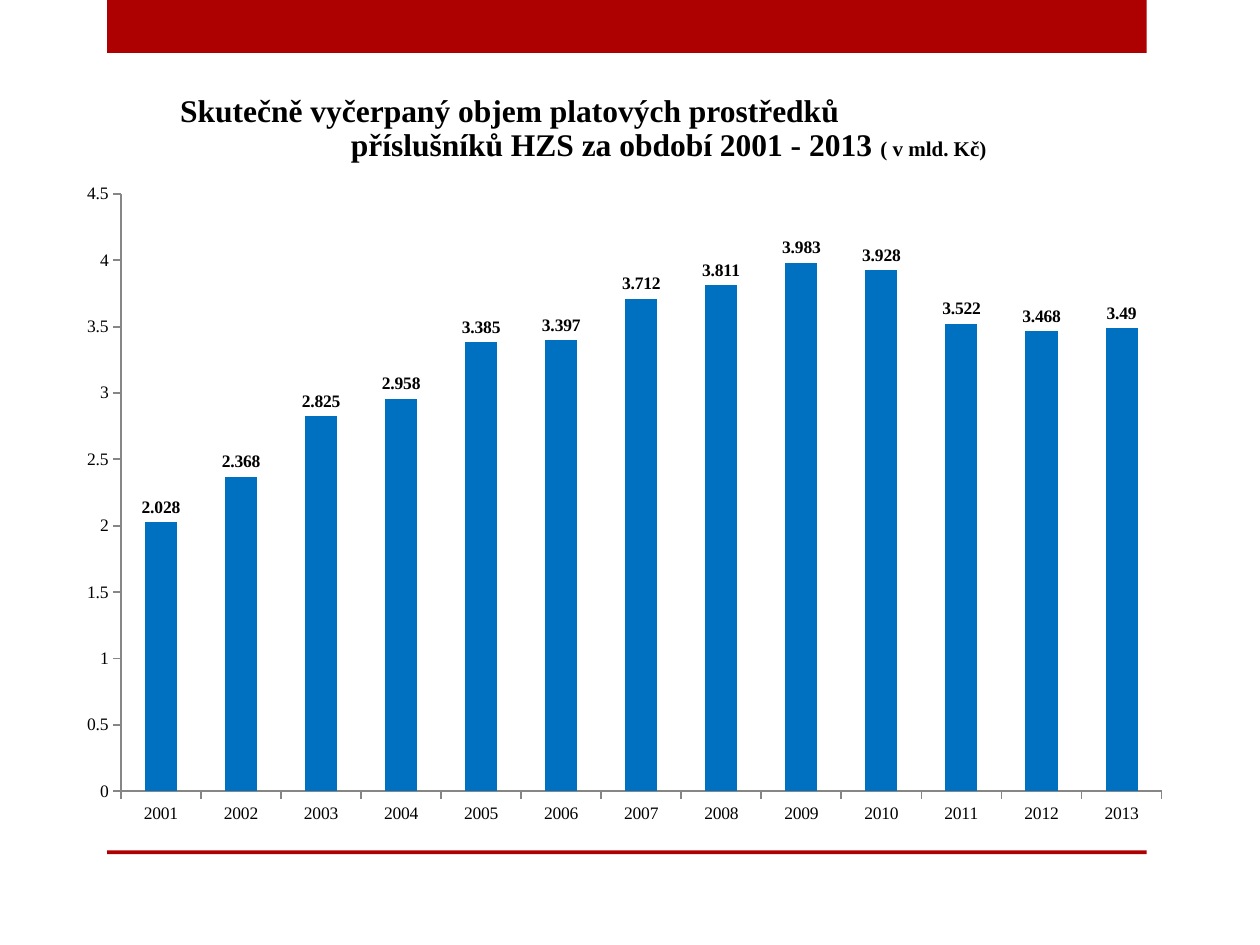
from dataclasses import dataclass

from pptx import Presentation
from pptx.chart.data import CategoryChartData
from pptx.dml.color import RGBColor as RGB
from pptx.enum.chart import XL_CHART_TYPE as Kind
from pptx.enum.chart import XL_LABEL_POSITION as Place
from pptx.enum.chart import XL_TICK_MARK as Tick
from pptx.enum.shapes import MSO_SHAPE as Shape
from pptx.enum.text import MSO_ANCHOR as Anchor
from pptx.enum.text import MSO_AUTO_SIZE as Fit
from pptx.enum.text import PP_ALIGN as Align
from pptx.oxml import parse_xml
from pptx.oxml.ns import nsdecls
from pptx.util import Inches, Pt


@dataclass(frozen=True)
class Theme:
    face: str = "Times New Roman"
    red: RGB = RGB(0xAD, 0x01, 0x01)
    blue: RGB = RGB(0x00, 0x70, 0xC0)
    ink: RGB = RGB(0, 0, 0)
    axis: RGB = RGB(0x86, 0x86, 0x86)
    head: Pt = Pt(18)
    unit: Pt = Pt(12)
    pitch: Pt = Pt(19.5)
    label: Pt = Pt(10)
    line: Pt = Pt(1)


THEME = Theme()
YEARS = range(2001, 2014)
SPEND = (2.028, 2.368, 2.825, 2.958, 3.385, 3.397, 3.712,
         3.811, 3.983, 3.928, 3.522, 3.468, 3.49)


def style(font, size, bold=False):
    font.name = THEME.face
    font.size = size
    font.bold = bold
    font.color.rgb = THEME.ink


def add_bands(slide, left, width):
    for top, height in ((0, 0.42), (6.75, 0.03)):
        band = slide.shapes.add_shape(
            Shape.RECTANGLE, left, Inches(top), width, Inches(height))
        band.shadow.inherit = False
        band.fill.solid()
        band.fill.fore_color.rgb = THEME.red
        band.line.fill.background()


def set_title(slide, left, top, width, height):
    title = slide.shapes.title
    title.left, title.top, title.width, title.height = left, top, width, height
    frame = title.text_frame
    frame.margin_left = frame.margin_right = 0
    frame.margin_top = frame.margin_bottom = 0
    frame.vertical_anchor = Anchor.TOP
    frame.auto_size = Fit.NONE
    frame.word_wrap = True

    first = frame.paragraphs[0]
    first.text = "Skutečně vyčerpaný objem platových prostředků"
    first.alignment = Align.LEFT
    second = frame.add_paragraph()
    second.add_run().text = "příslušníků HZS za období 2001 - 2013 "
    unit = second.add_run()
    unit.text = "( v mld. Kč)"
    second.alignment = Align.RIGHT
    for para in frame.paragraphs:
        para.line_spacing = THEME.pitch
        style(para.font, THEME.head, True)
    unit.font.size = THEME.unit


def fix_plot(chart, x, y, w, h):
    """Pin the inner plot area, given as fractions of the chart."""
    area = chart._chartSpace.chart.plotArea
    for old in area.findall("{*}layout"):
        area.remove(old)
    parts = "".join(f'<c:{tag} val="{val:.4f}"/>' for tag, val in
                    (("x", x), ("y", y), ("w", w), ("h", h)))
    area.insert(0, parse_xml(
        f'<c:layout {nsdecls("c")}><c:manualLayout>'
        '<c:layoutTarget val="inner"/>'
        '<c:xMode val="edge"/><c:yMode val="edge"/>'
        f'{parts}</c:manualLayout></c:layout>'))


def add_columns(slide, left, top, width, height):
    data = CategoryChartData()
    data.categories = [str(year) for year in YEARS]
    data.add_series("Series 1", SPEND)
    chart = slide.shapes.add_chart(
        Kind.COLUMN_CLUSTERED, left, top, width, height, data).chart
    chart.has_title = False
    chart.has_legend = False
    style(chart.font, THEME.label)
    fix_plot(chart, Inches(0.45) / width, Inches(1.02) / height,
             Inches(8.26) / width, Inches(4.74) / height)

    for axis in (chart.category_axis, chart.value_axis):
        axis.has_major_gridlines = False
        axis.major_tick_mark = Tick.OUTSIDE
        axis.minor_tick_mark = Tick.NONE
        axis.format.line.color.rgb = THEME.axis
        axis.format.line.width = THEME.line
        style(axis.tick_labels.font, THEME.label)
    scale = chart.value_axis
    scale.minimum_scale, scale.maximum_scale, scale.major_unit = 0, 4.5, 0.5

    plot = chart.plots[0]
    plot.gap_width = 150
    plot.vary_by_categories = False
    bars = plot.series[0]
    bars.format.fill.solid()
    bars.format.fill.fore_color.rgb = THEME.blue
    labels = bars.data_labels
    labels.show_value = True
    labels.position = Place.OUTSIDE_END
    style(labels.font, THEME.label, True)


def main():
    deck = Presentation()
    deck.slide_width, deck.slide_height = Inches(10), Inches(7.5)
    slide = deck.slides.add_slide(deck.slide_layouts[5])
    add_bands(slide, Inches(0.85), Inches(8.25))
    add_columns(slide, Inches(0.51), Inches(0.52), Inches(8.89), Inches(6.14))
    set_title(slide, Inches(1.43), Inches(0.75), Inches(6.4), Inches(0.6))
    deck.save("out.pptx")


if __name__ == "__main__":
    main()
